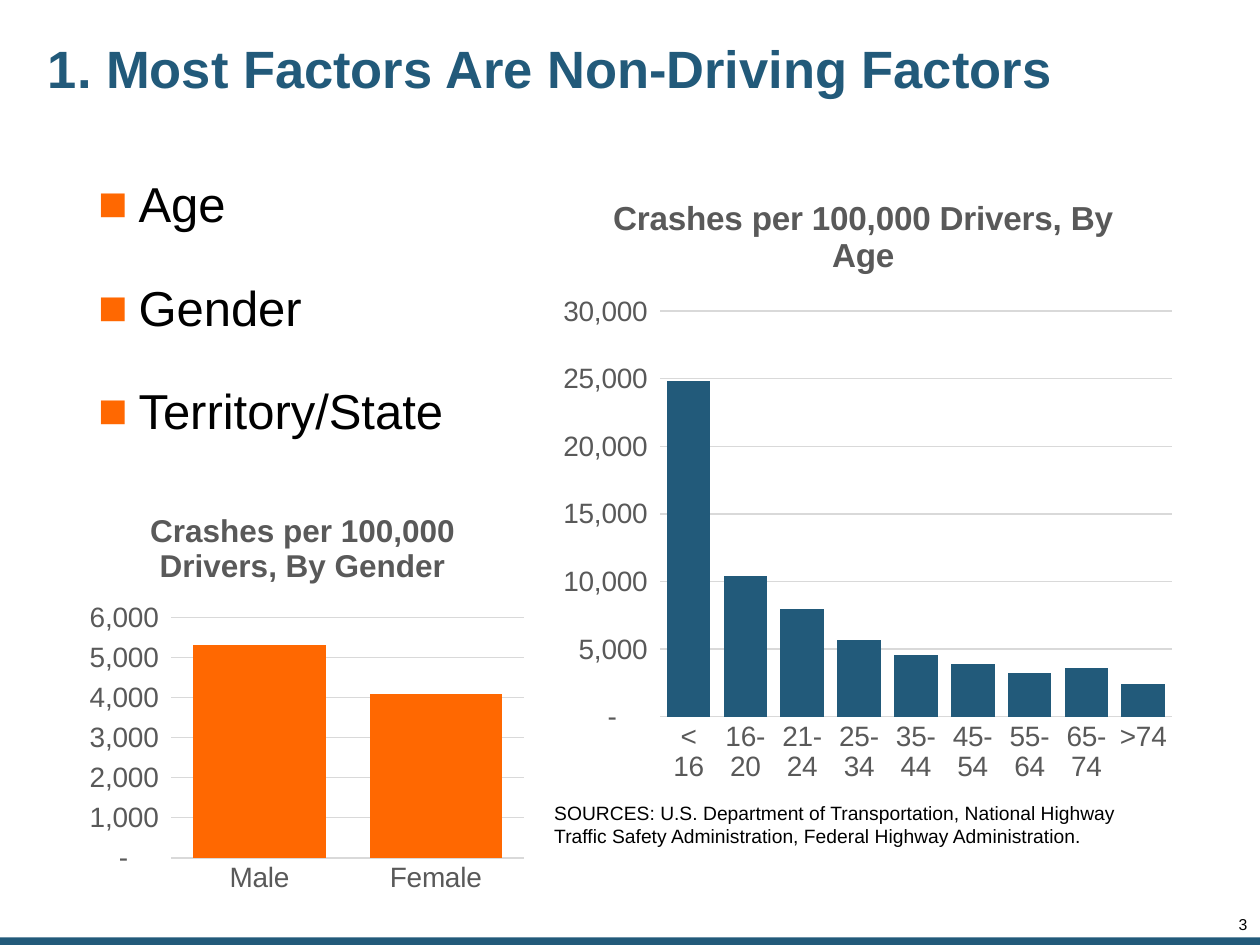
from lxml import etree
from pptx import Presentation
from pptx.chart.data import CategoryChartData
from pptx.dml.color import RGBColor
from pptx.enum.chart import XL_CHART_TYPE, XL_TICK_MARK
from pptx.enum.shapes import MSO_SHAPE
from pptx.enum.text import MSO_ANCHOR, PP_ALIGN
from pptx.oxml import parse_xml
from pptx.oxml.ns import nsdecls, qn
from pptx.util import Inches, Pt

COLORS = {"blue": "225A7A", "orange": "FF6801", "black": "000000",
          "gray": "595959", "grid": "D9D9D9"}
NUMBER_FORMAT = '_(* #,##0_);_(* \\(#,##0\\);_(* "-"??_);_('


class SlideBuilder:
    def __init__(self, slide, font="Arial"):
        self.slide = slide
        self.font = font

    def color(self, name):
        return RGBColor.from_string(COLORS[name])

    def style(self, font, size, color, bold=False):
        font.name, font.size, font.bold = self.font, Pt(size), bold
        font.color.rgb = self.color(color)

    def bar(self, box, color):
        bar = self.slide.shapes.add_shape(MSO_SHAPE.RECTANGLE, *map(Inches, box))
        bar.shadow.inherit = False
        bar.fill.solid()
        bar.fill.fore_color.rgb = self.color(color)
        bar.line.fill.background()

    def text(self, box, lines, size, color="black", bold=False, inset=0.05,
             spacing=1.0, gap=0, align=PP_ALIGN.LEFT, anchor=MSO_ANCHOR.TOP,
             bullet=None):
        """Add a text box; gap is the space in points between paragraphs."""
        frame = self.slide.shapes.add_textbox(*map(Inches, box)).text_frame
        frame.word_wrap = True
        frame.vertical_anchor = anchor
        frame.margin_left = frame.margin_right = Inches(inset)
        frame.margin_top = frame.margin_bottom = Inches(min(inset, 0.05))
        for index, line in enumerate(lines):
            paragraph = frame.add_paragraph() if index else frame.paragraphs[0]
            if bullet:
                self.add_bullet(paragraph, bullet)
            paragraph.alignment = align
            paragraph.line_spacing = spacing
            if index:
                paragraph.space_before = Pt(gap)
            run = paragraph.add_run()
            run.text = line
            self.style(run.font, size, color, bold)

    def add_bullet(self, paragraph, color, indent=0.32):
        properties = paragraph._p.get_or_add_pPr()
        properties.set("marL", str(Inches(indent)))
        properties.set("indent", str(-Inches(indent)))
        bullet_color = etree.SubElement(properties, qn("a:buClr"))
        etree.SubElement(bullet_color, qn("a:srgbClr"), val=COLORS[color])
        etree.SubElement(properties, qn("a:buFont"), typeface=self.font)
        etree.SubElement(properties, qn("a:buChar"), char="■")

    def column_chart(self, box, plot_box, title, title_size, crashes, color,
                     gap, top, step):
        data = CategoryChartData(number_format=NUMBER_FORMAT)
        data.categories = list(crashes)
        data.add_series("Series 1", list(crashes.values()))
        chart = self.slide.shapes.add_chart(
            XL_CHART_TYPE.COLUMN_CLUSTERED, *map(Inches, box), data).chart
        self.style(chart.font, 16, "gray")
        chart.has_legend = False
        chart.has_title = True
        run = chart.chart_title.text_frame.paragraphs[0].add_run()
        run.text = title
        self.style(run.font, title_size, "gray", bold=True)
        chart.chart_title.include_in_layout = False

        plot = chart.plots[0]
        plot.gap_width = gap
        plot.vary_by_categories = False
        fill = plot.series[0].format.fill
        fill.solid()
        fill.fore_color.rgb = self.color(color)

        categories, values = chart.category_axis, chart.value_axis
        for axis in (categories, values):
            axis.major_tick_mark = axis.minor_tick_mark = XL_TICK_MARK.NONE
            self.style(axis.tick_labels.font, 16, "gray")
        values.minimum_scale, values.maximum_scale = 0, top
        values.major_unit = step
        values.tick_labels.number_format = NUMBER_FORMAT
        values.tick_labels.number_format_is_linked = False
        values.format.line.fill.background()
        values.has_major_gridlines = True
        for line in (categories.format.line, values.major_gridlines.format.line):
            line.color.rgb = self.color("grid")
            line.width = Pt(0.75)
        self.place_plot(chart, box, plot_box)

    def place_plot(self, chart, box, plot_box):
        """Fix the inner plot area, given in slide inches."""
        left, top, width, height = box
        x, y, w, h = plot_box
        shares = {"x": (x - left) / width, "y": (y - top) / height,
                  "w": w / width, "h": h / height}
        entries = "".join(f'<c:{key} val="{share:.4f}"/>'
                          for key, share in shares.items())
        plot_area = chart._chartSpace.chart.plotArea
        for old in plot_area.findall(qn("c:layout")):
            plot_area.remove(old)
        plot_area.insert(0, parse_xml(
            f'<c:layout {nsdecls("c")}><c:manualLayout>'
            '<c:layoutTarget val="inner"/><c:xMode val="edge"/>'
            f'<c:yMode val="edge"/>{entries}</c:manualLayout></c:layout>'))


def main():
    deck = Presentation()
    deck.slide_width, deck.slide_height = Inches(10), Inches(7.5)
    builder = SlideBuilder(deck.slides.add_slide(deck.slide_layouts[6]))

    builder.bar((0, 7.44, 10, 0.06), "blue")
    builder.text((0.33, 0.1, 8.09, 0.94),
                 ["1. Most Factors Are Non-Driving Factors"], 30, "blue",
                 bold=True, spacing=0.9, anchor=MSO_ANCHOR.MIDDLE)

    crashes_by_age = {"< 16": 24800, "16-20": 10400, "21-24": 8000,
                      "25-34": 5700, "35-44": 4600, "45-54": 3900,
                      "55-64": 3200, "65-74": 3600, ">74": 2400}
    builder.column_chart((4.3, 1.36, 5.1, 4.95), (5.24, 2.47, 4.06, 3.22),
                         "Crashes per 100,000 Drivers, By Age", 19,
                         crashes_by_age, "blue", gap=30, top=30000, step=5000)
    builder.text((9.41, 7.28, 0.49, 0.13), ["3"], 9, inset=0, spacing=0.85,
                 align=PP_ALIGN.RIGHT)
    builder.column_chart((0.57, 3.88, 3.66, 3.28), (1.36, 4.9, 2.8, 1.91),
                         "Crashes per 100,000 Drivers, By Gender", 18,
                         {"Male": 5300, "Female": 4100}, "orange",
                         gap=33, top=6000, step=1000)
    builder.text((4.3, 6.31, 4.99, 0.47),
                 ["SOURCES: U.S. Department of Transportation, National Highway "
                  "Traffic Safety Administration, Federal Highway "
                  "Administration."], 11, inset=0.1)
    builder.text((0.73, 1.38, 3.4, 2.5), ["Age", "Gender", "Territory/State"],
                 28, spacing=0.9, gap=29, bullet="orange")

    deck.save("out.pptx")


if __name__ == "__main__":
    main()
